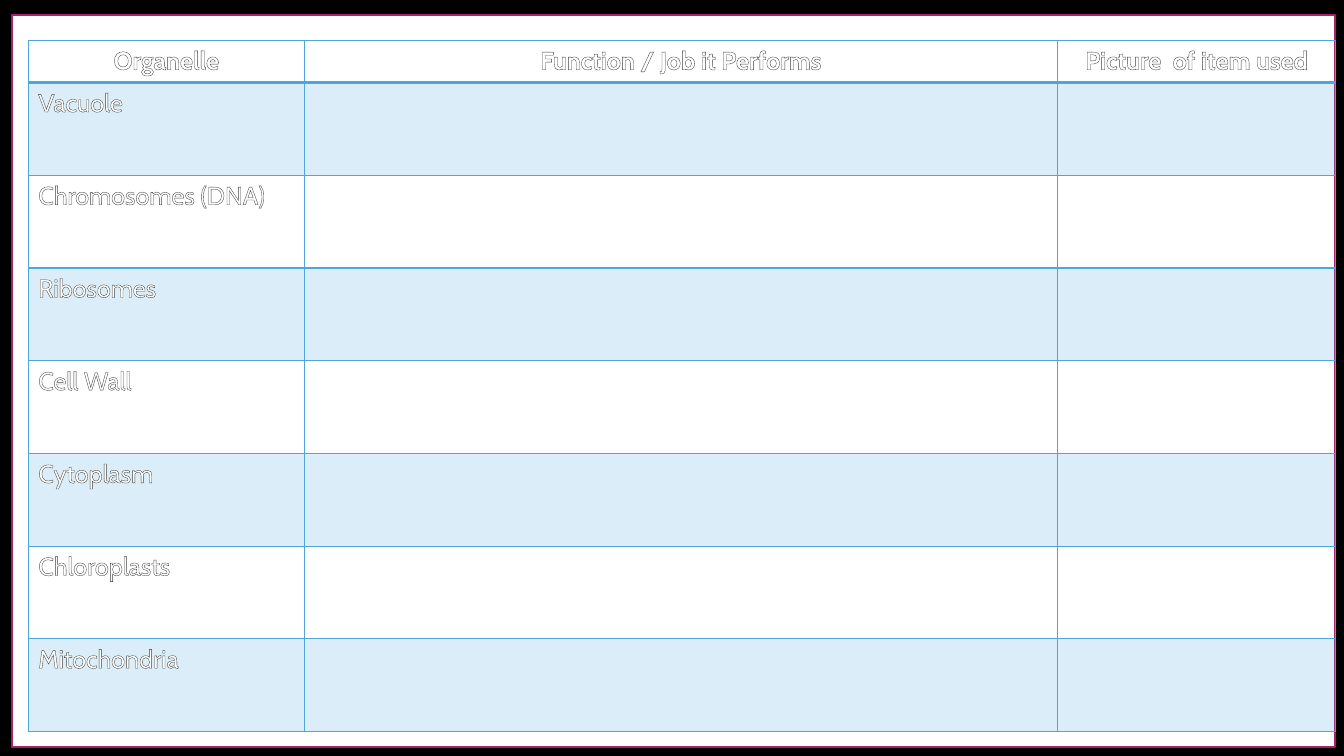
import pptx
import pptx.dml.color
import pptx.enum.text
import pptx.oxml
import pptx.oxml.ns
import pptx.util
from lxml import etree

THEME = {
    "background": "000000", "panel": "FFFFFF", "panel_line": "A8216B",
    "grid": "4EA6DC", "text": "FFFFFF", "text_outline": "404040",
    "band_alpha": 20, "font": "Cabin", "size": 18,
    "line": 1, "header_line": 2, "outline": 0.75,
}
SLIDE_SIZE = (13.33, 7.5)
PANEL = (0.12, 0.15, 13.12, 7.26)
TABLE_ORIGIN = (0.28, 0.4)
COLUMNS = (2.74, 7.47, 2.76)
HEADER_HEIGHT, ROW_HEIGHT = 0.42, 0.92
HEADINGS = ("Organelle", "Function / Job it Performs", "Picture  of item used")
ORGANELLES = ("Vacuole", "Chromosomes (DNA)", "Ribosomes", "Cell Wall",
              "Cytoplasm", "Chloroplasts", "Mitochondria")


def inches(values):
    return [pptx.util.Inches(value) for value in values]


def color(name):
    return pptx.dml.color.RGBColor.from_string(THEME[name])


def paint(fill, name):
    fill.solid()
    fill.fore_color.rgb = color(name)


def line_xml(tag, name, width):
    """Build a solid line element for a cell border or a text outline."""
    line = etree.Element(pptx.oxml.ns.qn(f"a:{tag}"), w=str(pptx.util.Pt(width)))
    solid = etree.SubElement(line, pptx.oxml.ns.qn("a:solidFill"))
    etree.SubElement(solid, pptx.oxml.ns.qn("a:srgbClr"), val=THEME[name])
    return line


def add_panel(page):
    panel = page.shapes.add_shape(
        pptx.enum.shapes.MSO_SHAPE.RECTANGLE, *inches(PANEL))
    panel.shadow.inherit = False
    paint(panel.fill, "panel")
    panel.line.color.rgb = color("panel_line")
    panel.line.width = pptx.util.Pt(THEME["line"])


def write_cell(cell, text, header):
    para = cell.text_frame.paragraphs[0]
    if header:
        para.alignment = pptx.enum.text.PP_ALIGN.CENTER
    span = para.add_run()
    span.text = text
    formats = {"name": THEME["font"], "size": pptx.util.Pt(THEME["size"]),
               "bold": header}
    for key, value in formats.items():
        setattr(span.font, key, value)
    span.font.color.rgb = color("text")
    span.font._element.insert(
        0, line_xml("ln", "text_outline", THEME["outline"]))


def style_cell(cell, row):
    # Every second row carries a translucent band
    if row % 2:
        paint(cell.fill, "grid")
        shade = cell._tc.tcPr.find(".//" + pptx.oxml.ns.qn("a:srgbClr"))
        etree.SubElement(shade, pptx.oxml.ns.qn("a:alpha"),
                         val=str(THEME["band_alpha"] * 1000))
    else:
        cell.fill.background()
    # The rule under the header is heavier
    widths = {side: THEME["line"] for side in ("lnL", "lnR", "lnT", "lnB")}
    if row == 0:
        widths["lnB"] = THEME["header_line"]
    elif row == 1:
        widths["lnT"] = THEME["header_line"]
    for place, (side, width) in enumerate(widths.items()):
        cell._tc.tcPr.insert(place, line_xml(side, "grid", width))


def add_organelle_table(page):
    heights = [HEADER_HEIGHT] + [ROW_HEIGHT] * len(ORGANELLES)
    frame = page.shapes.add_table(
        len(heights), len(COLUMNS),
        *inches((*TABLE_ORIGIN, sum(COLUMNS), sum(heights))))
    table = frame.table
    table.first_row = table.horz_banding = False
    for column, width in zip(table.columns, inches(COLUMNS)):
        column.width = width
    for row, height in zip(table.rows, inches(heights)):
        row.height = height
    contents = [HEADINGS] + [(name, "", "") for name in ORGANELLES]
    for row, texts in enumerate(contents):
        for column, text in enumerate(texts):
            cell = table.cell(row, column)
            style_cell(cell, row)
            if text:
                write_cell(cell, text, header=row == 0)


def main():
    deck = pptx.Presentation()
    deck.slide_width, deck.slide_height = inches(SLIDE_SIZE)
    page = deck.slides.add_slide(deck.slide_layouts[6])
    paint(page.background.fill, "background")
    add_panel(page)
    add_organelle_table(page)
    deck.save("out.pptx")


if __name__ == "__main__":
    main()
